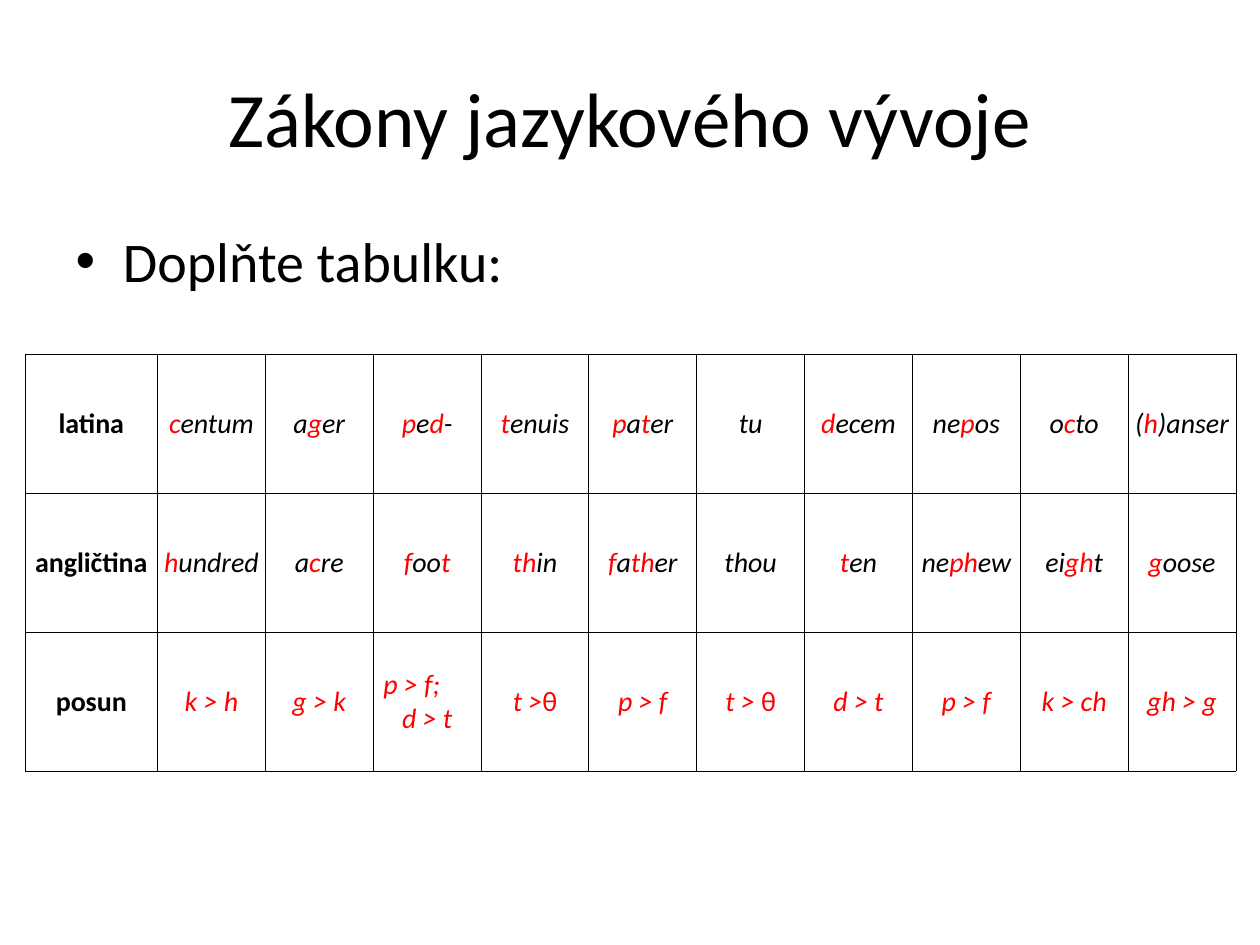
from lxml import etree
from pptx import Presentation
from pptx.dml.color import RGBColor
from pptx.enum import text
from pptx.oxml import ns
from pptx.util import Inches, Pt

FONT = "Calibri"
HUE = {"ink": "000000", "mark": "FF0000"}
# Bars switch the red marking on and off; a line feed starts a paragraph.
ROWS = [
    ["latina", "|c|entum", "a|g|er", "|p|e|d|-", "|t|enuis", "|p|a|t|er",
     "tu", "|d|ecem", "ne|p|os", "o|c|to", "(|h|)anser"],
    ["angličtina", "|h|undred", "a|c|re", "|f|oo|t", "|th|in", "|f|a|th|er",
     "thou", "|t|en", "ne|ph|ew", "ei|gh|t", "|g|oose"],
    ["posun", "|k > h", "|g > k", "|p > f;\n|d > t", "|t >||θ", "|p > f",
     "|t > ||θ", "|d > t", "|p > f", "|k > ch", "|gh > g"],
]


def style(run, size, hue="ink"):
    run.font.name = FONT
    run.font.size = Pt(size)
    run.font.color.rgb = RGBColor.from_string(HUE[hue])


def place(shape, box):
    shape.left, shape.top, shape.width, shape.height = map(Inches, box)


def add_title(slide, box):
    title = slide.shapes.title
    place(title, box)
    title.text_frame.text = "Zákony jazykového vývoje"
    style(title.text_frame.paragraphs[0].runs[0], 44)


def add_body(slide, box):
    body = slide.placeholders[1]
    place(body, box)
    body.text_frame.text = "Doplňte tabulku:"
    style(body.text_frame.paragraphs[0].runs[0], 32)


def add_border(cell):
    props = cell._tc.get_or_add_tcPr()
    for i, side in enumerate(("lnL", "lnR", "lnT", "lnB")):
        line = etree.Element(ns.qn(f"a:{side}"), w=str(Pt(0.5)))
        fill = etree.SubElement(line, ns.qn("a:solidFill"))
        etree.SubElement(fill, ns.qn("a:srgbClr"), val=HUE["ink"])
        props.insert(i, line)


def fill_cell(cell, words, head):
    cell.fill.background()
    add_border(cell)
    cell.vertical_anchor = text.MSO_ANCHOR.MIDDLE
    cell.margin_left = cell.margin_right = cell.margin_top = Inches(0.01)
    cell.margin_bottom = 0
    frame = cell.text_frame
    lines = words.split("\n")
    for i, line in enumerate(lines):
        para = frame.add_paragraph() if i else frame.paragraphs[0]
        para.alignment = text.PP_ALIGN.CENTER
        if i < len(lines) - 1:
            para.alignment = text.PP_ALIGN.LEFT
            para._p.get_or_add_pPr().set("marL", str(Inches(0.07)))
        for j, part in enumerate(line.split("|")):
            if part:
                run = para.add_run()
                run.text = part
                style(run, 16, "mark" if j % 2 else "ink")
                run.font.bold = head
                run.font.italic = not head and part != "θ"


def add_grid(slide, box):
    left, top, width, height = box
    first = 1.05
    count = len(ROWS[0])
    table = slide.shapes.add_table(len(ROWS), count, *map(Inches, box)).table
    table.first_row = table.horz_banding = False
    for i, col in enumerate(table.columns):
        col.width = Inches((width - first) / (count - 1) if i else first)
    for r, row in enumerate(ROWS):
        table.rows[r].height = Inches(height / len(ROWS))
        for c, words in enumerate(row):
            fill_cell(table.cell(r, c), words, c == 0)


def main():
    deck = Presentation()
    deck.slide_width, deck.slide_height = Inches(10), Inches(7.5)
    slide = deck.slides.add_slide(deck.slide_layouts[1])
    add_title(slide, (0.5, 0.3, 9, 1.25))
    add_body(slide, (0.5, 1.75, 9, 4.95))
    add_grid(slide, (0.2, 2.81, 9.61, 3.31))
    deck.save("out.pptx")


if __name__ == "__main__":
    main()
